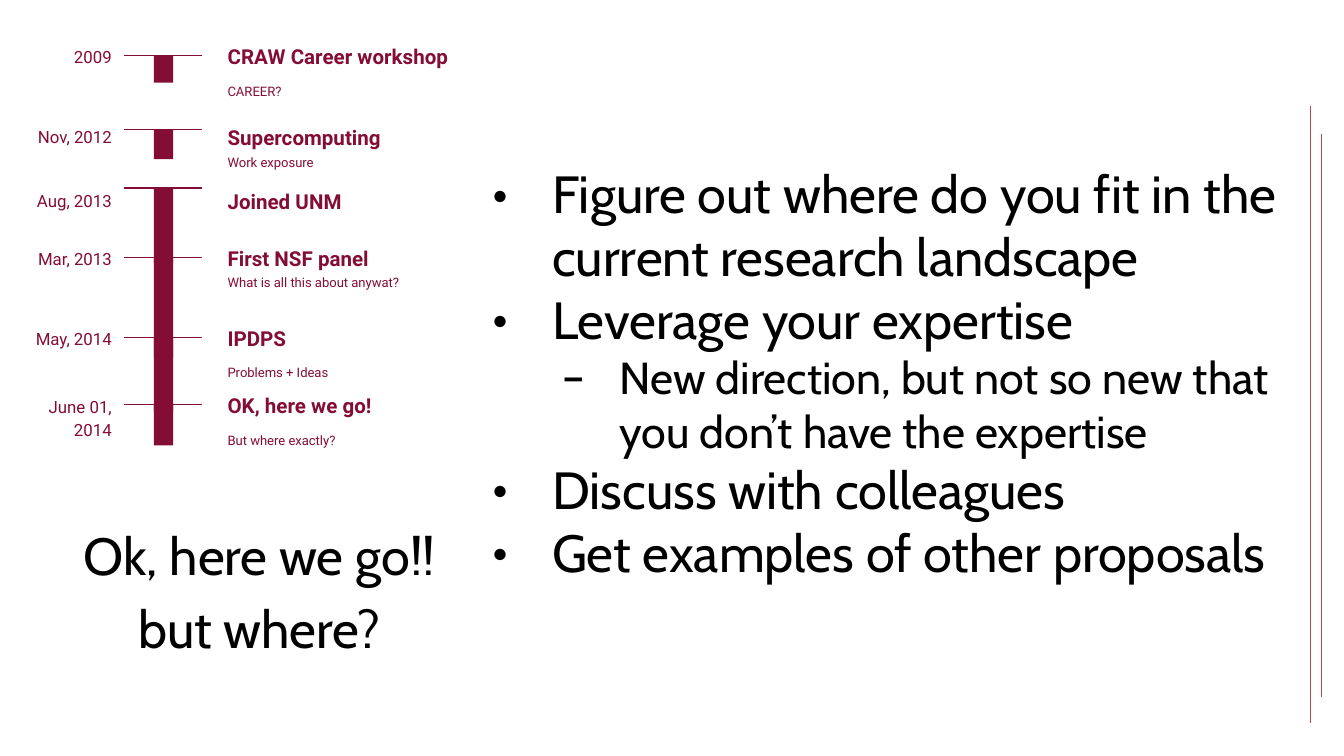
from lxml.etree import SubElement
from pptx import Presentation
from pptx.dml.color import RGBColor
from pptx.enum.shapes import MSO_CONNECTOR as Connector, MSO_SHAPE as Shape
from pptx.enum.text import MSO_ANCHOR as Anchor, PP_ALIGN as Align
from pptx.oxml.ns import qn
from pptx.util import Emu, Pt

MAROON, RED, BLACK = "840D35", "BD4B48", "000000"

DATE = {"name": "Roboto", "size": Pt(9)}
TITLE = {"name": "Roboto", "size": Pt(11), "bold": True}
NOTE = {"name": "Roboto", "size": Pt(7)}
BODY = {"name": "Cabin", "size": Pt(28)}
SUBPOINT = {"name": "Cabin", "size": Pt(24)}

MILESTONES = [
    (83, 40, "2009", -35, "CRAW Career workshop", -43, "CAREER?", 24),
    (193, 44, "Nov, 2012", -26, "Supercomputing", -32, "Work exposure", 20),
    (280, 112, "Aug, 2013", -18, "Joined UNM", -24, "", 0),
    (383, 150, "Mar, 2013", -35, "First NSF panel", -42, "What is all this about anywat?", 8),
    (502, 112, "May, 2014", -35, "IPDPS", -42, "Problems + Ideas", 24),
    (602, 61, "June 01, 2014", -36, "OK, here we go!", -42, "But where exactly?", 24),
]

ADVICE = [
    (0, "Figure out where do you fit in the current research landscape"),
    (0, "Leverage your expertise"),
    (1, "New direction, but not so new that you don’t have the expertise"),
    (0, "Discuss with colleagues"),
    (0, "Get examples of other proposals"),
]
LEVELS = [("•", 100, -88, BODY), ("–", 200, -84, SUBPOINT)]


def px(value):
    return Emu(value * 4572)


def color(value):
    return RGBColor.from_string(value)


def apply(target, values):
    for name, value in values.items():
        setattr(target, name, value)


def add_line(shapes, start, end, line_color):
    line = shapes.add_connector(Connector.STRAIGHT, *map(px, start + end))
    line.line.color.rgb = color(line_color)
    line.line.width = Pt(0.75)
    SubElement(line.element.spPr, qn("a:effectLst"))


def add_text_box(shapes, left, top, width, height):
    frame = shapes.add_textbox(px(left), px(top), px(width), px(height)).text_frame
    margins = dict.fromkeys(("margin_left", "margin_top", "margin_right", "margin_bottom"), px(20))
    apply(frame, {"word_wrap": True, "vertical_anchor": Anchor.TOP, **margins})
    return frame


def write(paragraph, text, font, font_color, **layout):
    run = paragraph.add_run()
    run.text = text
    apply(run.font, font)
    run.font.color.rgb = color(font_color)
    apply(paragraph, layout)


def add_bullet(paragraph, symbol, margin, indent, typeface):
    properties = paragraph._p.get_or_add_pPr()
    properties.set("marL", str(px(margin)))
    properties.set("indent", str(px(indent)))
    bullet_color = SubElement(properties, qn("a:buClr"))
    SubElement(bullet_color, qn("a:srgbClr"), val=BLACK)
    SubElement(properties, qn("a:buFont"), typeface=typeface)
    SubElement(properties, qn("a:buChar"), char=symbol)


def add_milestone(slide, left, top, bar_height, date, date_shift, title, title_shift, note, note_shift):
    shapes = slide.shapes.add_group_shape().shapes
    bar = shapes.add_shape(Shape.RECTANGLE, px(left + 209), px(top), px(29), px(bar_height))
    bar.shadow.inherit = False
    bar.fill.solid()
    bar.fill.fore_color.rgb = color(MAROON)
    bar.line.fill.background()
    add_line(shapes, (left + 281, top), (left + 165, top), MAROON)
    labels = [
        (date, DATE, 0, date_shift, 166, 76, {"alignment": Align.RIGHT}),
        (title, TITLE, 299, title_shift, 596, 60, {}),
        (note, NOTE, 299, note_shift, 596, 90, {"space_after": Pt(16)}),
    ]
    for text, font, offset, shift, width, height, layout in labels:
        if text:
            frame = add_text_box(shapes, left + offset, top + shift, width, height)
            write(frame.paragraphs[0], text, font, MAROON, line_spacing=1.15, **layout)


def add_timeline(slide, left, top):
    for offset, *details in MILESTONES:
        add_milestone(slide, left, top + offset, *details)


def add_question(slide, left, top, width, height):
    frame = add_text_box(slide.shapes, left, top, width, height)
    write(frame.paragraphs[0], "Ok, here we go!!", BODY, BLACK, alignment=Align.CENTER)
    write(frame.add_paragraph(), "but where?", BODY, BLACK,
          alignment=Align.CENTER, space_before=Pt(5.6))


def add_advice(slide, left, top, width, height):
    frame = add_text_box(slide.shapes, left, top, width, height)
    for index, (level, text) in enumerate(ADVICE):
        paragraph = frame.add_paragraph() if index else frame.paragraphs[0]
        symbol, margin, indent, font = LEVELS[level]
        add_bullet(paragraph, symbol, margin, indent, font["name"])
        write(paragraph, text, font, BLACK, level=level)


def add_edge_lines(slide, left, top):
    add_line(slide.shapes, (left, top), (left, top + 918), RED)
    add_line(slide.shapes, (left + 17, top + 42), (left + 17, top + 880), RED)


def main():
    presentation = Presentation()
    apply(presentation, {"slide_width": px(2000), "slide_height": px(1125)})
    slide = presentation.slides.add_slide(presentation.slide_layouts[6])
    add_edge_lines(slide, 1950, 158)
    add_timeline(slide, 20, 0)
    add_question(slide, 34, 758, 704, 254)
    add_advice(slide, 702, 220, 1292, 842)
    presentation.save("out.pptx")


if __name__ == "__main__":
    main()
